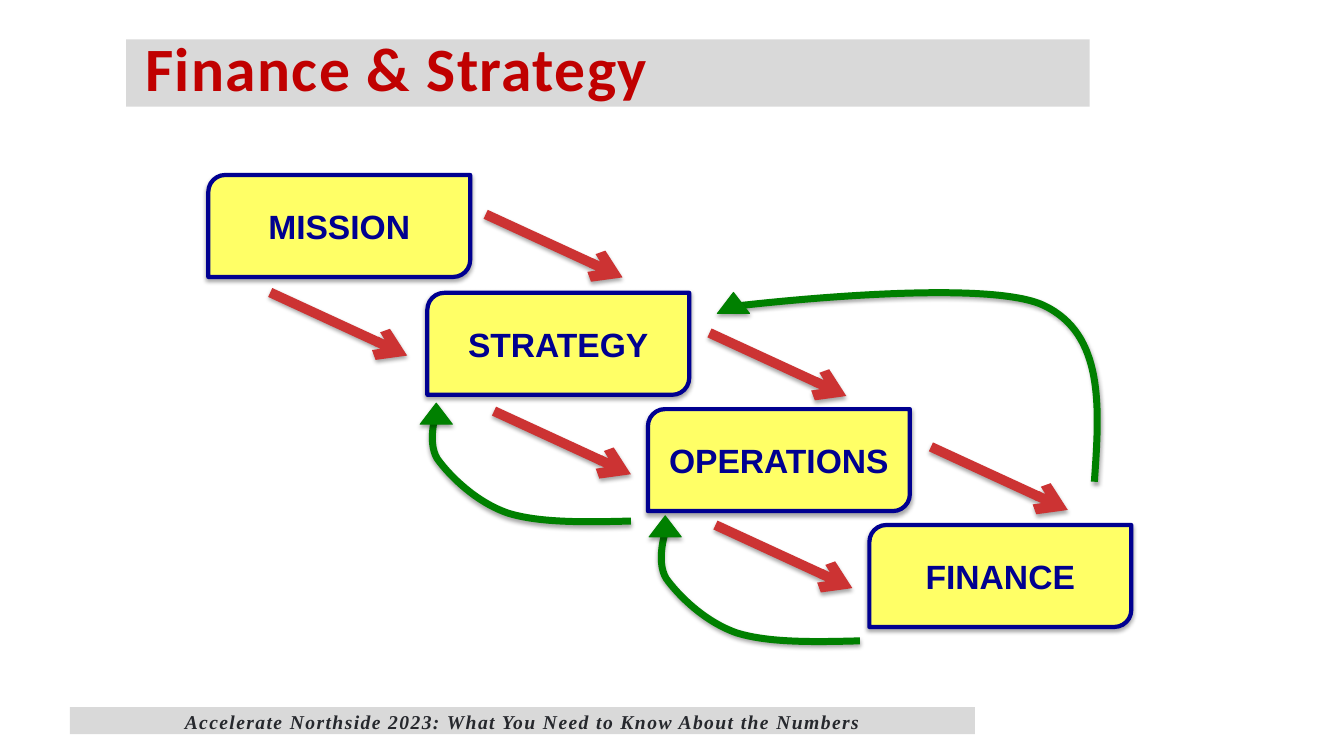
from lxml import etree
from pptx import Presentation
from pptx.dml.color import RGBColor
from pptx.enum.shapes import MSO_CONNECTOR, MSO_SHAPE
from pptx.enum.text import MSO_ANCHOR, MSO_AUTO_SIZE, PP_ALIGN
from pptx.oxml import parse_xml
from pptx.oxml.ns import nsdecls, qn
from pptx.util import Cm, Pt

BOX, TRIANGLE, RECT = MSO_SHAPE.ROUND_2_DIAG_RECTANGLE, MSO_SHAPE.ISOSCELES_TRIANGLE, MSO_SHAPE.RECTANGLE
STRAIGHT = MSO_CONNECTOR.STRAIGHT
TOP, MIDDLE = MSO_ANCHOR.TOP, MSO_ANCHOR.MIDDLE
LEFT, CENTER = PP_ALIGN.LEFT, PP_ALIGN.CENTER
NO_FIT = MSO_AUTO_SIZE.NONE

YELLOW = RGBColor(0xFF, 0xFF, 0x66)
NAVY = RGBColor(0x00, 0x00, 0x90)
RED = RGBColor(0xCC, 0x33, 0x33)
GREEN = RGBColor(0x00, 0x80, 0x00)
GREY = RGBColor(0xD9, 0xD9, 0xD9)
TITLE_RED = RGBColor(0xC0, 0x00, 0x00)
INK = RGBColor(0x26, 0x28, 0x2D)


def outline(shape, color, width):
    """Set the line of a shape and give it a soft shadow below."""
    shape.line.color.rgb = color
    shape.line.width = Pt(width)
    shape._element.spPr.append(parse_xml(
        f'<a:effectLst {nsdecls("a")}>'
        '<a:outerShdw blurRad="39370" dist="22860" dir="5400000" rotWithShape="0">'
        '<a:srgbClr val="000000"><a:alpha val="35000"/></a:srgbClr>'
        '</a:outerShdw></a:effectLst>'))


def write(shape, text, font, size, color, align, anchor):
    tf = shape.text_frame
    tf.word_wrap = True
    tf.auto_size = NO_FIT
    tf.vertical_anchor = anchor
    p = tf.paragraphs[0]
    p.alignment = align
    r = p.add_run()
    r.text = text
    r.font.name = font
    r.font.size = Pt(size)
    r.font.bold = True
    r.font.color.rgb = color
    return p, r


prs = Presentation()
prs.slide_width, prs.slide_height = Cm(33.87), Cm(19.05)
s = prs.slides.add_slide(prs.slide_layouts[5])

# Grey bands: title and footer
title = s.shapes.title
title.left, title.top, title.width, title.height = Cm(3.18), Cm(0.99), Cm(24.28), Cm(1.7)
footer = s.shapes.add_shape(RECT, Cm(1.76), Cm(17.82), Cm(22.81), Cm(0.68))
footer.shadow.inherit = False
footer.line.fill.background()
bands = [
    (title, "Finance & Strategy", "Calibri", 44, TITLE_RED, LEFT, 0.48, 0.13),
    (footer, "Accelerate Northside 2023: What You Need to Know About the Numbers",
     "Times New Roman", 14, INK, CENTER, 0, 0.18),
]
for band, text, font, size, color, align, indent, inset in bands:
    band.fill.solid()
    band.fill.fore_color.rgb = GREY
    p, r = write(band, text, font, size, color, align, TOP)
    p.line_spacing = 0.8
    r.font.italic = band is footer
    r._r.get_or_add_rPr().set("spc", "100")
    tf = band.text_frame
    tf.margin_left, tf.margin_top = Cm(indent), Cm(inset)
    tf.margin_right = tf.margin_bottom = 0

# Staircase of boxes
boxes = [
    ("MISSION", 5.25, 4.41),
    ("STRATEGY", 10.77, 7.38),
    ("OPERATIONS", 16.33, 10.31),
    ("FINANCE", 21.91, 13.23),
]
for name, x, y in boxes:
    box = s.shapes.add_shape(BOX, Cm(x), Cm(y), Cm(6.6), Cm(2.57))
    box.fill.solid()
    box.fill.fore_color.rgb = YELLOW
    outline(box, NAVY, 3)
    write(box, name, "Arial", 24, NAVY, CENTER, MIDDLE)

# Two parallel arrows for each step down
for x, y in [(6.81, 7.37), (12.45, 10.36), (18.03, 13.23)]:
    for dx, dy in [(0, 0), (5.43, -1.97)]:
        x1, y1 = x + dx, y + dy
        arrow = s.shapes.add_connector(STRAIGHT, Cm(x1), Cm(y1), Cm(x1 + 3.45), Cm(y1 + 1.59))
        outline(arrow, RED, 7)
        etree.SubElement(arrow.line._get_or_add_ln(), qn("a:tailEnd"), type="arrow")

# Feedback curves: Bezier points relative to the start, three for each piece
SMALL_LOOP = [
    (-1.14, 0.03), (-2.29, 0.05), (-3.1, -0.2),
    (-3.91, -0.48), (-4.57, -1.14), (-4.88, -1.57),
    (-5.16, -2.03), (-4.88, -2.82), (-4.88, -2.82),
]
BIG_LOOP = [
    (0.13, -1.85), (0.26, -3.71), (-1.27, -4.44),
    (-2.79, -5.18), (-9.09, -4.42), (-9.09, -4.42),
]
feedback = [
    (27.58, 12.14, BIG_LOOP, 18.08, 7.37),
    (21.67, 16.15, SMALL_LOOP, 16.36, 13),
    (15.9, 13.13, SMALL_LOOP, 10.59, 10.16),
]
for x, y, loop, head_x, head_y in feedback:
    builder = s.shapes.build_freeform(Cm(x), Cm(y))
    builder.add_line_segments([(Cm(x + dx), Cm(y + dy)) for dx, dy in loop], close=False)
    curve = builder.convert_to_shape()
    segments = list(curve._element.iter(qn("a:lnTo")))
    outline_path = segments[0].getparent()
    for i in range(0, len(segments), 3):
        bezier = etree.SubElement(outline_path, qn("a:cubicBezTo"))
        for segment in segments[i:i + 3]:
            bezier.append(segment[0])
            outline_path.remove(segment)
    curve.fill.background()
    outline(curve, GREEN, 5)

    head = s.shapes.add_shape(TRIANGLE, Cm(head_x), Cm(head_y), Cm(0.81), Cm(0.53))
    head.fill.solid()
    head.fill.fore_color.rgb = GREEN
    outline(head, GREEN, 0.75)

prs.save("out.pptx")
